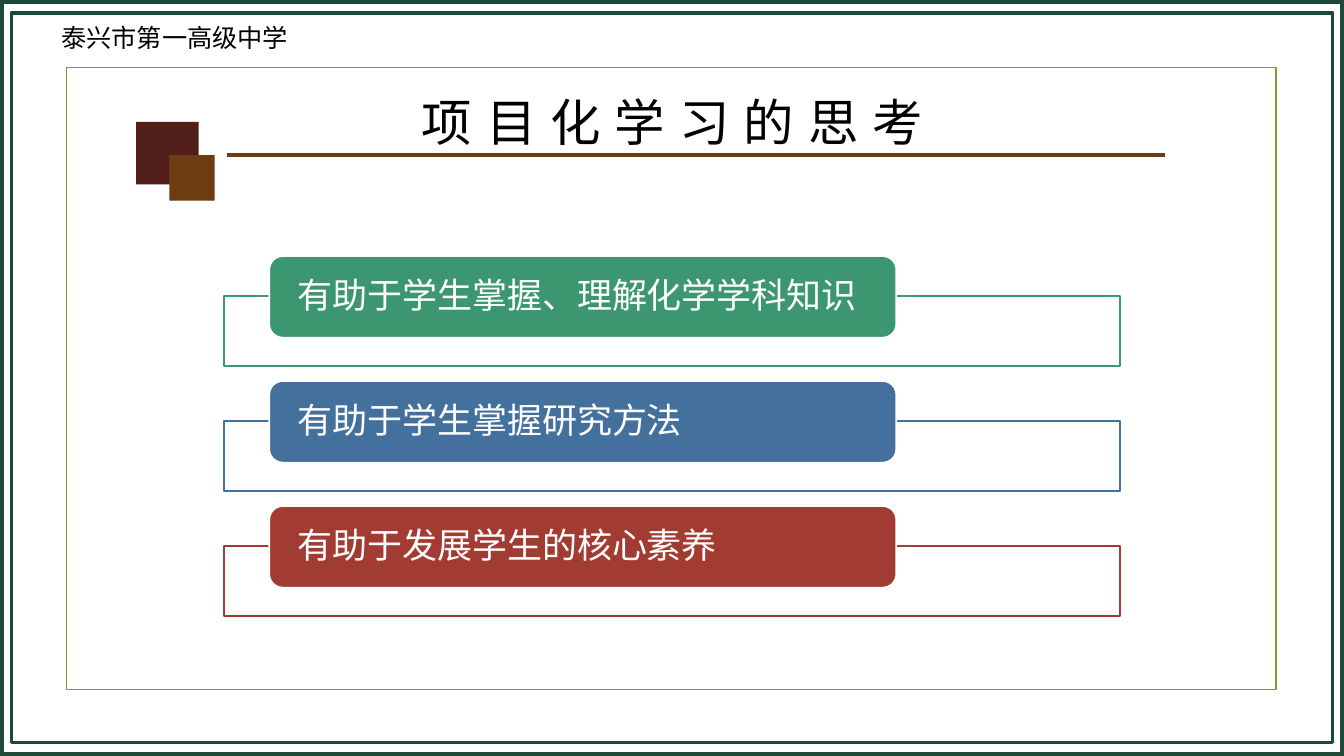
"""Build the slide on reflections about project-based learning."""
import dataclasses
import typing

import lxml.etree
import pptx
import pptx.dml.color
import pptx.enum.shapes
import pptx.enum.text
import pptx.oxml.ns
import pptx.util

Inches = pptx.util.Inches
Pt = pptx.util.Pt
SHAPE = pptx.enum.shapes.MSO_SHAPE
ALIGN = pptx.enum.text.PP_ALIGN
ANCHOR = pptx.enum.text.MSO_ANCHOR
SIZING = pptx.enum.text.MSO_AUTO_SIZE

HUES = {
    "white": "FFFFFF", "black": "000000", "olive": "83992A",
    "pine": "1E4B38", "maroon": "511E19", "brown": "6D3C13",
    "green": "3C9770", "blue": "44709D", "red": "A23C33",
}
FONT = "Times New Roman"
TOP, STEP = 2.54, 1.24


@dataclasses.dataclass
class Box:
    left: float
    top: float
    width: float
    height: float
    fill: typing.Optional[str] = None
    line: typing.Optional[str] = None
    weight: float = 1.25
    kind: typing.Any = SHAPE.RECTANGLE


@dataclasses.dataclass
class Point:
    text: str
    hue: str


FRAMES = [
    Box(0.66, 0.67, 12, 6.17, line="olive"),
    Box(0, 0, 13.33, 7.5, line="pine", weight=6),
    Box(0.11, 0.13, 13.11, 7.24, line="pine", weight=2.25),
]
SQUARES = [
    Box(1.35, 1.21, 0.62, 0.62, fill="maroon"),
    Box(1.68, 1.54, 0.45, 0.45, fill="brown"),
]
POINTS = [
    Point("有助于学生掌握、理解化学学科知识", "green"),
    Point("有助于学生掌握研究方法", "blue"),
    Point("有助于发展学生的核心素养", "red"),
]


def tint(name: str) -> pptx.dml.color.RGBColor:
    return pptx.dml.color.RGBColor.from_string(HUES[name])


def apply(target: typing.Any, values: dict) -> None:
    for name, value in values.items():
        setattr(target, name, value)


def place(box: Box) -> tuple:
    return tuple(Inches(n) for n in (box.left, box.top, box.width, box.height))


def draw(slide: typing.Any, box: Box) -> typing.Any:
    shape = slide.shapes.add_shape(box.kind, *place(box))
    shape.shadow.inherit = False
    if box.fill:
        shape.fill.solid()
        shape.fill.fore_color.rgb = tint(box.fill)
    else:
        shape.fill.background()
    if box.line:
        shape.line.color.rgb = tint(box.line)
        shape.line.width = Pt(box.weight)
    else:
        shape.line.fill.background()
    return shape


def write(shape: typing.Any, text: str, size: float, hue: str,
          frame: dict, para: dict) -> typing.Any:
    apply(shape.text_frame, frame)
    line = shape.text_frame.paragraphs[0]
    apply(line, para)
    run = line.add_run()
    run.text = text
    apply(run.font, {"size": Pt(size), "name": FONT})
    run.font.color.rgb = tint(hue)
    return run


def label(slide: typing.Any, box: Box) -> typing.Any:
    return slide.shapes.add_textbox(*place(box))


def rule(slide: typing.Any) -> None:
    line = slide.shapes.add_connector(
        pptx.enum.shapes.MSO_CONNECTOR.STRAIGHT,
        Inches(2.25), Inches(1.54), Inches(11.55), Inches(1.54))
    line.line.color.rgb = tint("brown")
    line.line.width = Pt(3)
    props = line._element.spPr
    lxml.etree.SubElement(props, pptx.oxml.ns.qn("a:effectLst"))


def panel(slide: typing.Any, point: Point, top: float) -> None:
    back = draw(slide, Box(2.22, top + 0.4, 8.89, 0.69, "white", point.hue))
    shade = back._element.spPr.find(".//" + pptx.oxml.ns.qn("a:srgbClr"))
    lxml.etree.SubElement(shade, pptx.oxml.ns.qn("a:alpha"), val="90000")
    tab = draw(slide, Box(2.67, top, 6.22, 0.81, point.hue, "white",
                          kind=SHAPE.ROUNDED_RECTANGLE))
    frame = {
        "word_wrap": True, "vertical_anchor": ANCHOR.MIDDLE,
        "margin_left": Inches(0.24), "margin_right": Inches(0.24),
        "margin_top": 0, "margin_bottom": 0,
    }
    write(tab, point.text, 25, "white", frame,
          {"alignment": ALIGN.LEFT, "line_spacing": 0.9})


def main() -> None:
    deck = pptx.Presentation()
    apply(deck, {"slide_width": Inches(13.33), "slide_height": Inches(7.5)})
    slide = deck.slides.add_slide(deck.slide_layouts[6])
    for box in FRAMES:
        draw(slide, box)
    school = label(slide, Box(0.51, 0.17, 2.87, 0.4))
    write(school, "泰兴市第一高级中学", 18, "black",
          {"word_wrap": True, "auto_size": SIZING.SHAPE_TO_FIT_TEXT}, {})
    for box in SQUARES:
        draw(slide, box)
    rule(slide)
    title = label(slide, Box(2.57, 0.86, 8.2, 0.57))
    run = write(title, "项目化学习的思考", 36, "black", {"word_wrap": True},
                {"alignment": ALIGN.CENTER, "space_after": Pt(6)})
    run.font._element.set("spc", "1000")
    for row, point in enumerate(POINTS):
        panel(slide, point, TOP + row * STEP)
    deck.save("out.pptx")


if __name__ == "__main__":
    main()
